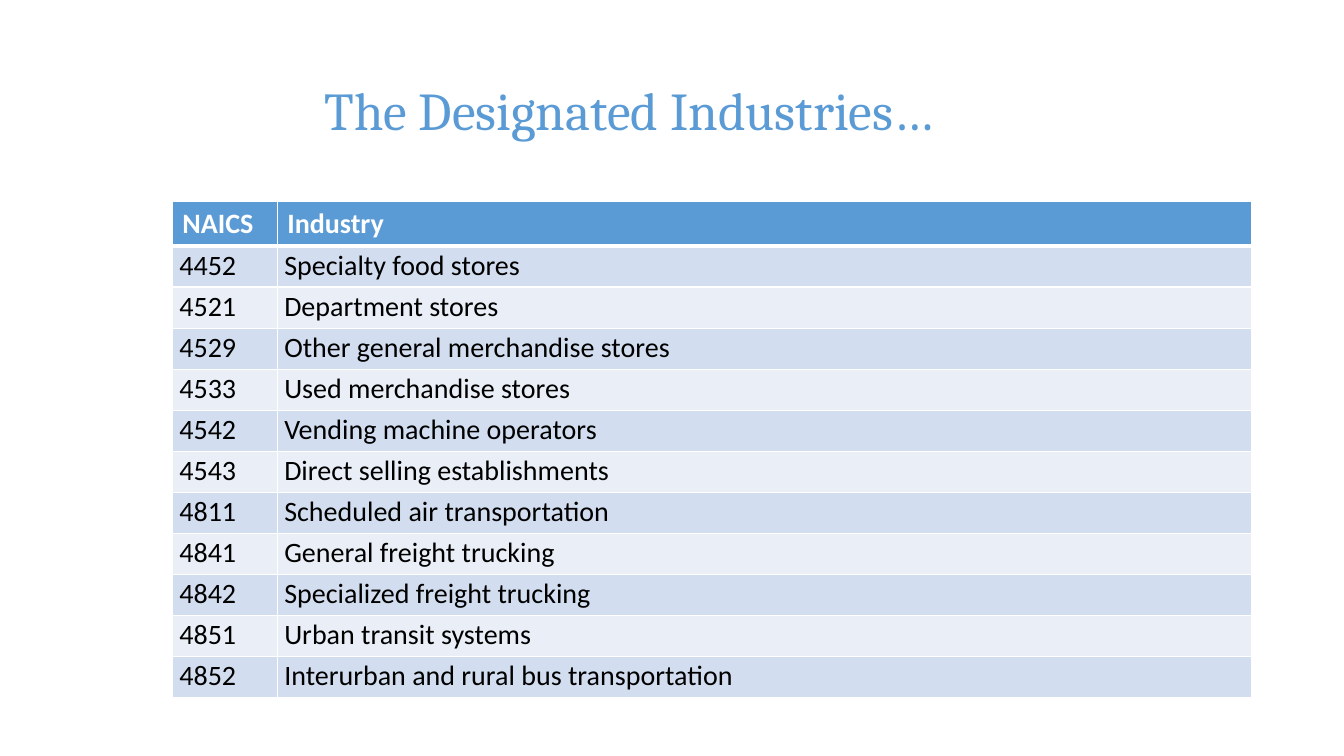
from lxml.etree import SubElement
from pptx import Presentation
from pptx.dml.color import RGBColor
from pptx.enum.text import MSO_ANCHOR
from pptx.oxml.ns import qn
from pptx.util import Inches, Pt

WHITE = RGBColor(0xFF, 0xFF, 0xFF)
BLACK = RGBColor(0, 0, 0)
BLUE = RGBColor(0x5B, 0x9B, 0xD5)
BANDS = (RGBColor(0xD2, 0xDE, 0xEF), RGBColor(0xEA, 0xEF, 0xF7))

HEADER = ("NAICS", "Industry")
INDUSTRIES = (
    ("4452", "Specialty food stores"),
    ("4521", "Department stores"),
    ("4529", "Other general merchandise stores"),
    ("4533", "Used merchandise stores"),
    ("4542", "Vending machine operators"),
    ("4543", "Direct selling establishments"),
    ("4811", "Scheduled air transportation"),
    ("4841", "General freight trucking"),
    ("4842", "Specialized freight trucking"),
    ("4851", "Urban transit systems"),
    ("4852", "Interurban and rural bus transportation"),
)
COLUMN_WIDTHS = (1.04, 9.66)
TABLE_HEIGHT = 4.89


def write(tf, text, font="Calibri", size=20, color=BLACK, bold=False, spacing=None):
    p = tf.paragraphs[0]
    p.line_spacing = spacing
    r = p.add_run()
    r.text = text
    r.font.name = font
    r.font.size = Pt(size)
    r.font.bold = bold
    r.font.color.rgb = color


def set_borders(cell, top=1, bottom=1):
    tc_pr = cell._tc.get_or_add_tcPr()
    for side, width in (("L", 1), ("R", 1), ("T", top), ("B", bottom)):
        ln = SubElement(tc_pr, qn(f"a:ln{side}"), w=str(Pt(width)))
        fill = SubElement(ln, qn("a:solidFill"))
        SubElement(fill, qn("a:srgbClr"), val=str(WHITE))


def set_fill(cell, color):
    cell.fill.solid()
    cell.fill.fore_color.rgb = color


def fill_header_cell(cell, text):
    set_borders(cell, bottom=3)
    set_fill(cell, BLUE)
    write(cell.text_frame, text, color=WHITE, bold=True)


def fill_body_cell(cell, text, row):
    set_borders(cell, top=3 if row == 0 else 1)
    set_fill(cell, BANDS[row % 2])
    cell.margin_left = cell.margin_right = Inches(0.07)
    cell.margin_top = cell.margin_bottom = 0
    write(cell.text_frame, text, spacing=1.07)


def add_title(s, text):
    sp = s.shapes.add_textbox(Inches(2.54), Inches(0.4), Inches(9.88), Inches(1.45))
    tf = sp.text_frame
    tf.word_wrap = True
    tf.vertical_anchor = MSO_ANCHOR.MIDDLE
    tf.margin_left = Inches(0.68)
    write(tf, text, font="Cambria", size=38, color=BLUE, spacing=0.9)


def add_industry_table(s):
    frame = s.shapes.add_table(
        len(INDUSTRIES) + 1, len(HEADER),
        Inches(1.71), Inches(2), Inches(sum(COLUMN_WIDTHS)), Inches(TABLE_HEIGHT),
    )
    table = frame.table
    for column, width in zip(table.columns, COLUMN_WIDTHS):
        column.width = Inches(width)
    for col, text in enumerate(HEADER):
        fill_header_cell(table.cell(0, col), text)
    for row, industry in enumerate(INDUSTRIES):
        for col, text in enumerate(industry):
            fill_body_cell(table.cell(row + 1, col), text, row)


def main():
    prs = Presentation()
    prs.slide_width = Inches(13.33)
    prs.slide_height = Inches(7.5)
    s = prs.slides.add_slide(prs.slide_layouts[6])
    add_industry_table(s)
    add_title(s, "The Designated Industries…")
    prs.save("out.pptx")


if __name__ == "__main__":
    main()
